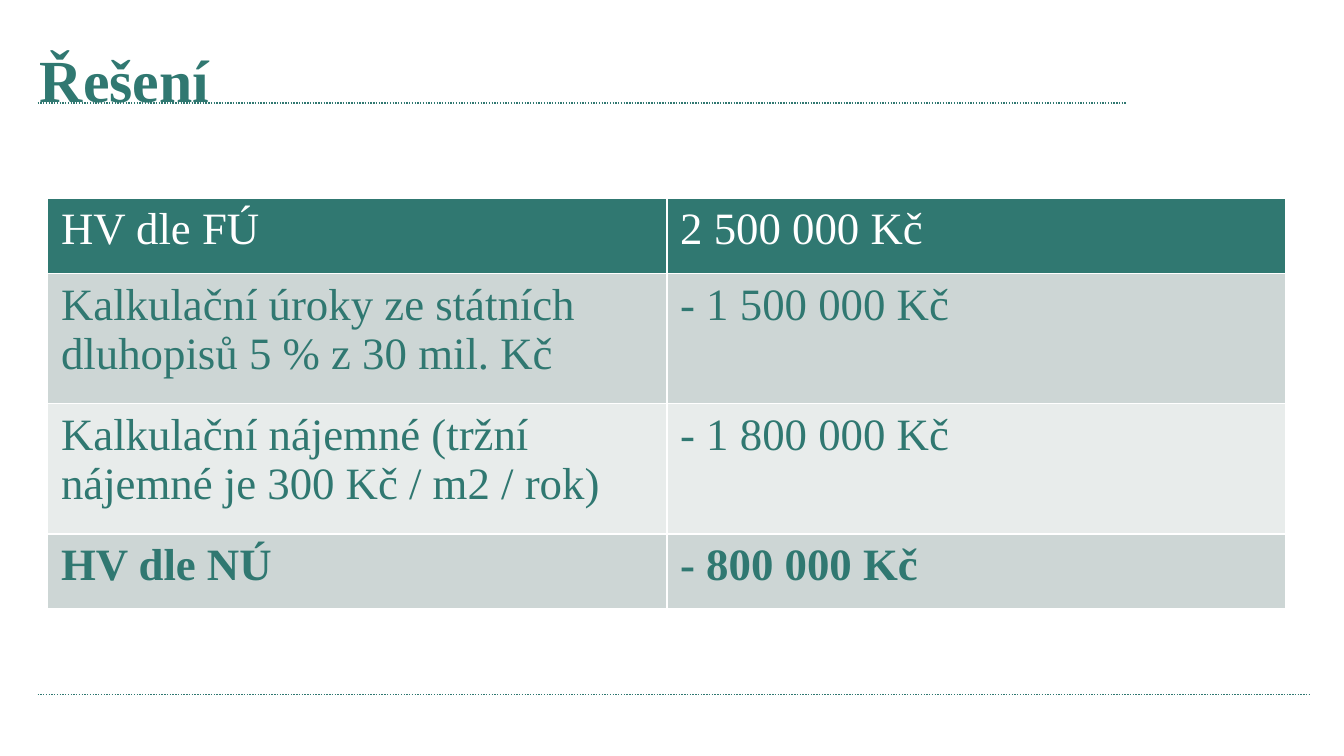
from lxml.etree import SubElement
from pptx import Presentation
from pptx.dml.color import RGBColor
from pptx.enum.dml import MSO_LINE
from pptx.enum.shapes import MSO_CONNECTOR
from pptx.enum.text import MSO_ANCHOR, MSO_AUTO_SIZE, PP_ALIGN
from pptx.oxml.ns import qn
from pptx.util import Cm, Pt

# Content
TITLE = "Řešení"
ROWS = [
    ("HV dle FÚ", "2 500 000 Kč"),
    ("Kalkulační úroky ze státních dluhopisů 5 % z 30 mil. Kč", "- 1 500 000 Kč"),
    ("Kalkulační nájemné (tržní nájemné je 300 Kč / m2 / rok)", "- 1 800 000 Kč"),
    ("HV dle NÚ", "- 800 000 Kč"),
]
ROW_HEIGHTS = [1.42, 2.46, 2.46, 1.42]
COL_WIDTH = 11.7
RULES = [(1.95, 21.3), (13.13, 24.77)]  # height on the slide, right end

# Style
FONT = "Times New Roman"
TEAL = RGBColor(0x30, 0x78, 0x71)
WHITE = RGBColor(0xFF, 0xFF, 0xFF)
BAND_DARK = RGBColor(0xCD, 0xD6, 0xD5)
BAND_LIGHT = RGBColor(0xE8, 0xEC, 0xEB)


def style_text(p, size, color, bold):
    for r in p.runs:
        r.font.name = FONT
        r.font.size = Pt(size)
        r.font.bold = bold
        r.font.color.rgb = color


prs = Presentation()
prs.slide_width, prs.slide_height = Cm(25.4), Cm(14.29)
s = prs.slides.add_slide(prs.slide_layouts[5])

# Dotted rules
for y, right in RULES:
    rule = s.shapes.add_connector(
        MSO_CONNECTOR.STRAIGHT, Cm(0.71), Cm(y), Cm(right), Cm(y))
    rule.line.color.rgb = TEAL
    rule.line.width = Pt(0.75)
    rule.line.dash_style = MSO_LINE.ROUND_DOT
    SubElement(rule._element.spPr, qn("a:effectLst"))

# Title
title = s.shapes.title
title.left, title.top, title.width, title.height = Cm(0.5), Cm(0.53), Cm(20.4), Cm(1.2)
tf = title.text_frame
tf.text = TITLE
tf.auto_size = MSO_AUTO_SIZE.NONE
tf.vertical_anchor = MSO_ANCHOR.TOP
tf.margin_top = Cm(0.28)
tf.paragraphs[0].alignment = PP_ALIGN.LEFT
style_text(tf.paragraphs[0], 32, TEAL, True)

# Table: header row, then alternating bands, bold result row
table = s.shapes.add_table(
    len(ROWS), 2, Cm(0.9), Cm(3.75), Cm(2 * COL_WIDTH), Cm(sum(ROW_HEIGHTS))).table
for col in table.columns:
    col.width = Cm(COL_WIDTH)
for i, (texts, height) in enumerate(zip(ROWS, ROW_HEIGHTS)):
    table.rows[i].height = Cm(height)
    fill = TEAL if i == 0 else BAND_DARK if i % 2 else BAND_LIGHT
    for j, text in enumerate(texts):
        cell = table.cell(i, j)
        cell.text = text
        cell.fill.solid()
        cell.fill.fore_color.rgb = fill
        style_text(cell.text_frame.paragraphs[0], 24,
                   WHITE if i == 0 else TEAL, i == len(ROWS) - 1)

prs.save("out.pptx")
